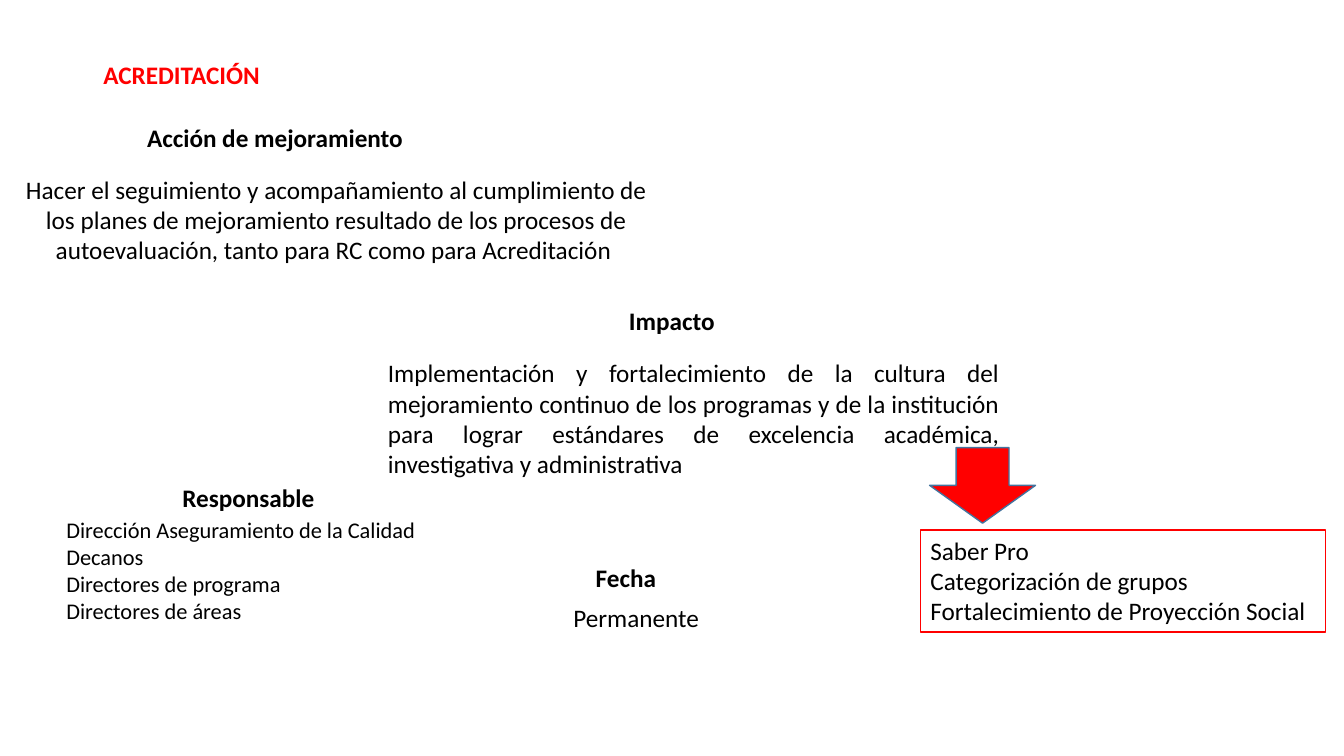
from dataclasses import dataclass

from pptx import Presentation
from pptx import util as u
from pptx.dml.color import RGBColor
from pptx.enum import shapes, text

COLORS = {"red": "FF0000", "black": "000000", "white": "FFFFFF", "blue": "43739E"}
FONT = "Calibri"
SLIDE_WIDTH, SLIDE_HEIGHT = u.Inches(13.33), u.Inches(7.5)
ALIGN = text.PP_ALIGN


@dataclass(frozen=True)
class Area:
    """A rectangle in percent of the slide's width and height."""

    left: float
    top: float
    width: float
    height: float

    def emu(self) -> tuple[int, int, int, int]:
        """Return left, top, width and height in EMU."""
        return (
            round(SLIDE_WIDTH * self.left / 100),
            round(SLIDE_HEIGHT * self.top / 100),
            round(SLIDE_WIDTH * self.width / 100),
            round(SLIDE_HEIGHT * self.height / 100),
        )


@dataclass(frozen=True)
class Entry:
    """A block of text on the slide."""

    wording: str
    area: Area
    size: int = 18
    bold: bool = False
    wrap: bool = True
    align: ALIGN = ALIGN.LEFT
    color: str = "black"
    framed: bool = False


def heading(wording: str, left: float, top: float, width: float, **style) -> Entry:
    """Describe a bold one-line heading."""
    return Entry(wording, Area(left, top, width, 5.33), bold=True, wrap=False, **style)


ENTRIES = [
    heading("ACREDITACIÓN ", 6.9, 7.2, 13.65, align=ALIGN.CENTER, color="red"),
    Entry(
        "Dirección Aseguramiento de la Calidad\nDecanos\n"
        "Directores de programa\nDirectores de áreas",
        Area(4.2, 67.6, 35.1, 15.73),
        size=16,
    ),
    Entry("Permanente", Area(41.93, 79.07, 11.4, 5.33)),
    heading("Acción de mejoramiento", 10.2, 15.47, 20.7),
    heading("Impacto", 46.06, 39.73, 7.95),
    heading("Responsable", 12.83, 63.2, 11.4),
    heading("Fecha", 43.59, 73.73, 6.45),
    Entry(
        "Implementación y fortalecimiento de la cultura del mejoramiento continuo "
        "de los programas y de la institución para lograr estándares de excelencia "
        "académica, investigativa y administrativa ",
        Area(28.13, 46.67, 46.96, 17.47),
        align=ALIGN.JUSTIFY,
    ),
    Entry(
        "Hacer el seguimiento y acompañamiento al cumplimiento de los planes de "
        "mejoramiento resultado de los procesos de autoevaluación, tanto para RC "
        "como para Acreditación ",
        Area(0, 22.4, 50.04, 13.47),
        align=ALIGN.CENTER,
    ),
    Entry(
        "Saber Pro\nCategorización de grupos\nFortalecimiento de Proyección Social",
        Area(68.49, 70.13, 30.16, 13.47),
        wrap=False,
        framed=True,
    ),
]
IMPACT_ARROW = Area(69.17, 59.2, 7.88, 10)


def rgb(name: str) -> RGBColor:
    """Look up a named colour."""
    return RGBColor.from_string(COLORS[name])


def paint(shape, fill: str, line: str) -> None:
    """Give a shape a solid fill and a one-point outline."""
    shape.fill.solid()
    shape.fill.fore_color.rgb = rgb(fill)
    shape.line.color.rgb = rgb(line)
    shape.line.width = u.Pt(1)


def draw_entry(slide, entry: Entry) -> None:
    """Add one text block to the slide."""
    block = slide.shapes.add_textbox(*entry.area.emu())
    if entry.framed:
        paint(block, "white", "red")
    frame = block.text_frame
    frame.word_wrap = entry.wrap
    frame.auto_size = text.MSO_AUTO_SIZE.SHAPE_TO_FIT_TEXT
    frame.text = entry.wording
    for paragraph in frame.paragraphs:
        paragraph.alignment = entry.align
        for run in paragraph.runs:
            run.font.name = FONT
            run.font.size = u.Pt(entry.size)
            run.font.bold = entry.bold
            run.font.color.rgb = rgb(entry.color)


def draw_arrow(slide, area: Area) -> None:
    """Add the arrow that leads from the impact to its outcomes."""
    arrow = slide.shapes.add_shape(shapes.MSO_SHAPE.DOWN_ARROW, *area.emu())
    arrow.shadow.inherit = False
    paint(arrow, "red", "blue")


def main() -> None:
    """Build the slide and save it."""
    deck = Presentation()
    deck.slide_width, deck.slide_height = SLIDE_WIDTH, SLIDE_HEIGHT
    slide = deck.slides.add_slide(deck.slide_layouts[6])
    for entry in ENTRIES:
        draw_entry(slide, entry)
    draw_arrow(slide, IMPACT_ARROW)
    deck.save("out.pptx")


if __name__ == "__main__":
    main()
